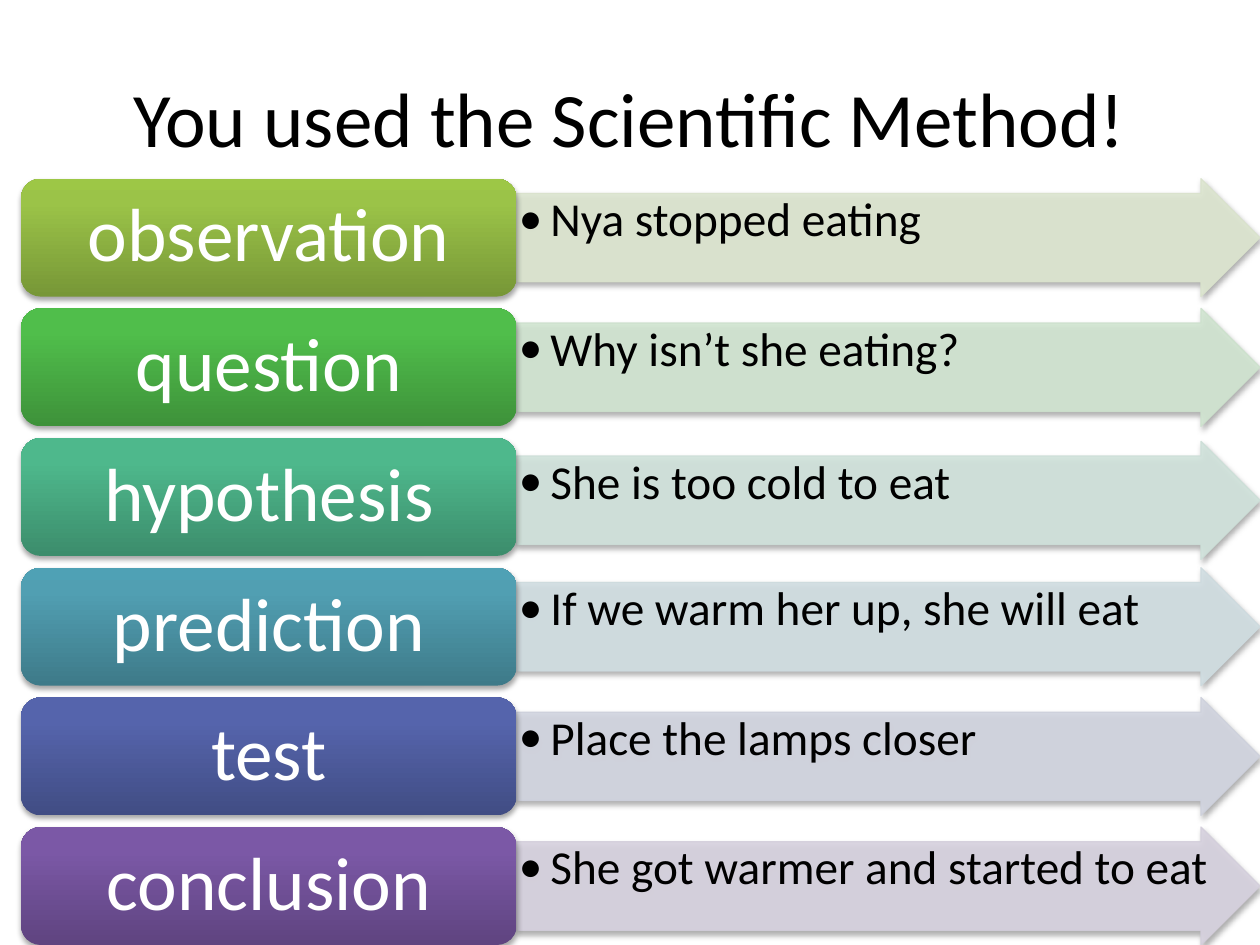
from copy import deepcopy
from dataclasses import dataclass

from lxml import etree
from pptx import Presentation
from pptx.dml.color import RGBColor
from pptx.enum.shapes import MSO_SHAPE
from pptx.enum.text import MSO_ANCHOR, PP_ALIGN
from pptx.oxml.ns import qn
from pptx.util import Pt

ROUNDED, ARROW = MSO_SHAPE.ROUNDED_RECTANGLE, MSO_SHAPE.RIGHT_ARROW
TOP, MIDDLE = MSO_ANCHOR.TOP, MSO_ANCHOR.MIDDLE
LEFT, CENTER = PP_ALIGN.LEFT, PP_ALIGN.CENTER


@dataclass(frozen=True)
class Theme:
    font: str = "Calibri"
    ink: str = "000000"
    label_ink: str = "FFFFFF"
    title_size: float = 44
    label_size: float = 43
    detail_size: float = 27


@dataclass(frozen=True)
class Step:
    label: str
    detail: str
    gradient: tuple  # bottom, 80 %, top
    arrow_fill: str
    arrow_line: str
    arrow_shift: float = 0


THEME = Theme()
STEPS = [
    Step("observation", "Nya stopped eating", ("779737", "9BC348", "9DC746"), "DEE7D1", "D9E2CC"),
    Step("question", "Why isn’t she eating?", ("3E923A", "50BE4B", "4EC149"), "D2E6D2", "CDE1CD"),
    Step("hypothesis", "She is too cold to eat", ("3C8D6C", "4EB88C", "4CBB8D"),
         "D2E4DD", "CDDFD8", arrow_shift=1.9),
    Step("prediction", "If we warm her up, she will eat", ("3E7A89", "519FB2", "4FA1B5"),
         "D2DFE3", "CDDADE"),
    Step("test", "Place the lamps closer", ("414D84", "5564AC", "5463AE"), "D3D6E1", "CED1DC"),
    Step("conclusion", "She got warmer and started to eat", ("5F4480", "7B58A6", "7C57A8"),
         "D8D3E0", "D3CEDB"),
]


def write(shape, text, *, size, color, align=CENTER, anchor=MIDDLE,
          insets=(0, 0, 0, 0), spacing=None, bullet_indent=None):
    frame = shape.text_frame
    frame.word_wrap = True
    frame.vertical_anchor = anchor
    (frame.margin_left, frame.margin_top,
     frame.margin_right, frame.margin_bottom) = map(Pt, insets)
    paragraph = frame.paragraphs[0]
    paragraph.alignment = align
    if spacing:
        paragraph.line_spacing = spacing
    if bullet_indent:
        paragraph.level = 1
        properties = paragraph._p.get_or_add_pPr()
        properties.set("marL", str(Pt(bullet_indent)))
        properties.set("indent", str(-Pt(bullet_indent)))
        etree.SubElement(properties, qn("a:buFont"), typeface=THEME.font)
        etree.SubElement(properties, qn("a:buChar"), char="•")
    run = paragraph.add_run()
    run.text = text
    run.font.name = THEME.font
    run.font.size = Pt(size)
    run.font.color.rgb = RGBColor.from_string(color)


def set_alpha(color_element, percent):
    etree.SubElement(color_element, qn("a:alpha"), val=str(percent * 1000))


def add_soft_shadow(shape):
    shape.shadow.inherit = False
    effects = shape._element.spPr.find(qn("a:effectLst"))
    shadow = etree.SubElement(effects, qn("a:outerShdw"), blurRad=str(Pt(3.1)),
                              dist=str(Pt(1.8)), dir="5400000", rotWithShape="0")
    set_alpha(etree.SubElement(shadow, qn("a:srgbClr"), val="000000"), 35)


def fill_upward_gradient(shape, colors):
    fill = shape.fill
    fill.gradient()
    fill.gradient_angle = 90
    stop_list = shape._element.spPr.find(".//" + qn("a:gsLst"))
    stop_list.append(deepcopy(stop_list[-1]))
    for stop, position, color in zip(fill.gradient_stops, (0, 0.8, 1), colors):
        stop.position = position
        stop.color.rgb = RGBColor.from_string(color)


def add_detail_arrow(slide, step, left, top, width, height):
    arrow = slide.shapes.add_shape(ARROW, Pt(left), Pt(top), Pt(width), Pt(height))
    arrow.adjustments[0], arrow.adjustments[1] = 0.75, 0.5
    arrow.fill.solid()
    arrow.fill.fore_color.rgb = RGBColor.from_string(step.arrow_fill)
    arrow.line.color.rgb = RGBColor.from_string(step.arrow_line)
    arrow.line.width = Pt(0.75)
    for color in arrow._element.spPr.iter(qn("a:srgbClr")):
        set_alpha(color, 90)
    add_soft_shadow(arrow)
    write(arrow, step.detail, size=THEME.detail_size, color=THEME.ink, align=LEFT,
          anchor=TOP, insets=(1.35, 1.2, 0, 0), spacing=0.9, bullet_indent=18)


def add_label(slide, step, left, top, width, height):
    label = slide.shapes.add_shape(ROUNDED, Pt(left), Pt(top), Pt(width), Pt(height))
    label.adjustments[0] = 0.1667
    fill_upward_gradient(label, step.gradient)
    label.line.fill.background()
    add_soft_shadow(label)
    write(label, step.label, size=THEME.label_size, color=THEME.label_ink, spacing=0.9)


def add_steps(slide, steps, left, top, width, height):
    """Stack label-and-arrow rows, with gaps of a tenth of a row."""
    row_height = height / (len(steps) + 0.1 * (len(steps) - 1))
    label_width = width * 0.4
    for index, step in enumerate(steps):
        row_top = top + index * row_height * 1.1
        add_detail_arrow(slide, step, left + label_width, row_top + step.arrow_shift,
                         width - label_width, row_height)
        add_label(slide, step, left, row_top, label_width, row_height)


def place_title(slide, text, left, top, width, height):
    title = slide.shapes.title
    title.left, title.top, title.width, title.height = map(Pt, (left, top, width, height))
    write(title, text, size=THEME.title_size, color=THEME.ink, insets=(7.2, 3.6, 7.2, 3.6))


def main():
    deck = Presentation()
    deck.slide_width, deck.slide_height = Pt(720), Pt(540)
    slide = deck.slides.add_slide(deck.slide_layouts[5])
    place_title(slide, "You used the Scientific Method!", 36, 21.6, 648, 90)
    add_steps(slide, STEPS, 12, 102.1, 708, 437.9)
    deck.save("out.pptx")


if __name__ == "__main__":
    main()
